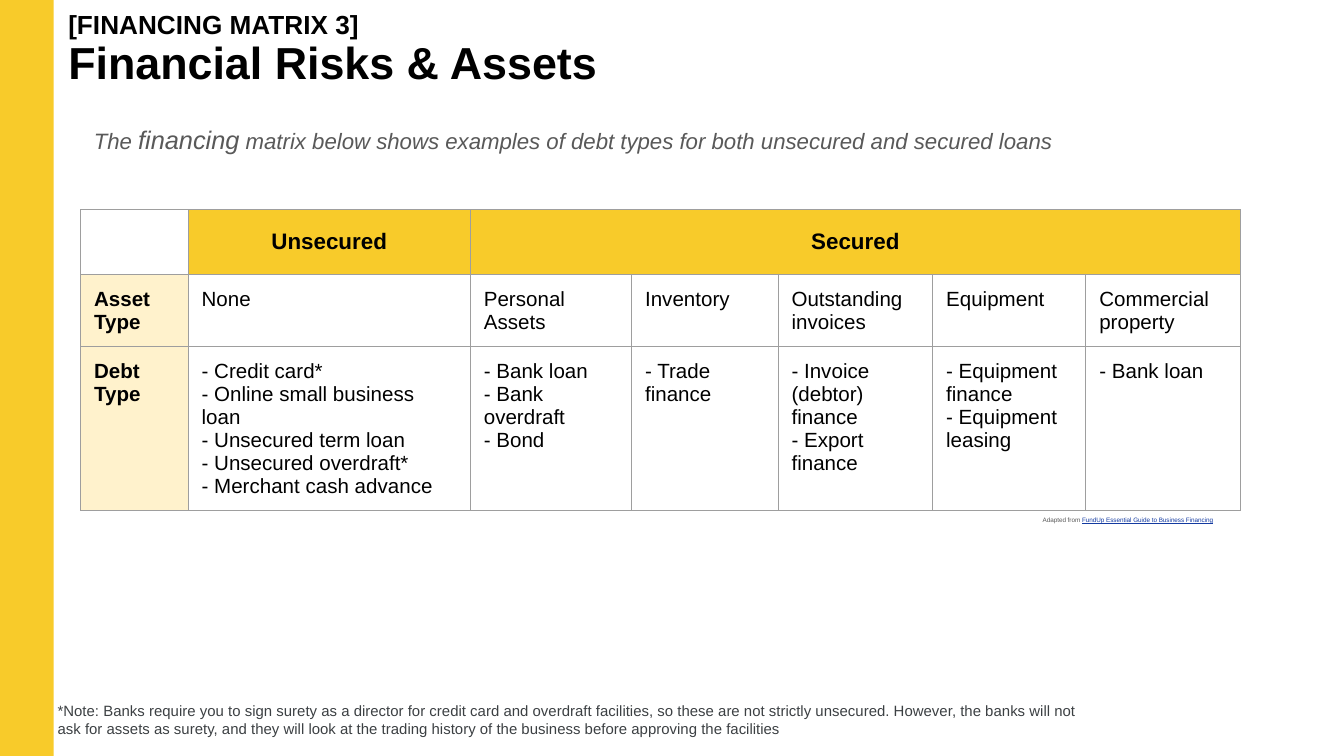
from lxml.etree import SubElement
from pptx import Presentation
from pptx.dml.color import RGBColor
from pptx.enum.shapes import MSO_SHAPE
from pptx.enum.text import MSO_ANCHOR, PP_ALIGN
from pptx.oxml.ns import qn
from pptx.util import Inches, Pt

YELLOW, CREAM, WHITE = "F8CB2A", "FFF2CC", "FFFFFF"
BLACK, GREY, NOTE_GREY, LINK_BLUE = "000000", "595959", "3C4043", "133AA1"
BORDER = "9E9E9E"
WIDTH = 10
HEIGHT = WIDTH * 9 / 16
MARGINS = ("margin_left", "margin_top", "margin_right", "margin_bottom")
COLUMN_WIDTHS = [0.8, 2.1, 1.2, 1.09, 1.15, 1.14, 1.15]
ROW_HEIGHTS = [0.48, 0.54, 1.22]
ROWS = [
    ["", "Unsecured", "Secured"],
    ["Asset Type", "None", "Personal Assets", "Inventory",
     "Outstanding invoices", "Equipment", "Commercial property"],
    ["Debt Type",
     "- Credit card*\n- Online small business loan\n- Unsecured term loan\n"
     "- Unsecured overdraft*\n- Merchant cash advance",
     "- Bank loan\n- Bank overdraft\n- Bond",
     "- Trade finance",
     "- Invoice (debtor) finance\n- Export finance",
     "- Equipment finance\n- Equipment leasing",
     "- Bank loan"],
]


def color(value):
    return RGBColor.from_string(value)


def set_values(target, values):
    for name, value in values.items():
        setattr(target, name, value)


def fill_solid(target, value):
    target.fill.solid()
    target.fill.fore_color.rgb = color(value)


def add_span(para, text, size, hue, **styles):
    span = para.add_run()
    span.text = text
    set_values(span.font, {"name": "Arial", "size": Pt(size), **styles})
    span.font.color.rgb = color(hue)


def add_text(page, box, paras, anchor=MSO_ANCHOR.TOP, **layout):
    frame = page.shapes.add_textbox(*map(Inches, box)).text_frame
    set_values(frame, {"word_wrap": True, "vertical_anchor": anchor,
                       **dict.fromkeys(MARGINS, Inches(0.1))})
    for index, spans in enumerate(paras):
        para = frame.paragraphs[0] if index == 0 else frame.add_paragraph()
        set_values(para, layout)
        for text, size, hue, styles in spans:
            add_span(para, text, size, hue, **styles)


def draw_borders(cell):
    properties = cell._tc.get_or_add_tcPr()
    for index, side in enumerate(("a:lnL", "a:lnR", "a:lnT", "a:lnB")):
        line = properties.makeelement(qn(side), {"w": str(Pt(0.75))})
        fill = SubElement(line, qn("a:solidFill"))
        SubElement(fill, qn("a:srgbClr"), val=BORDER)
        properties.insert(index, line)


def write_cell(cell, text, size, bold, align):
    for index, line in enumerate(text.split("\n")):
        frame = cell.text_frame
        para = frame.paragraphs[0] if index == 0 else frame.add_paragraph()
        set_values(para, {"alignment": align})
        para.font.size = Pt(size)
        if line:
            add_span(para, line, size, BLACK, bold=bold)


def cell_fill(row, column):
    if row == 0:
        return YELLOW if column else WHITE
    return WHITE if column else CREAM


def add_matrix(page, box):
    table = page.shapes.add_table(len(ROWS), len(COLUMN_WIDTHS),
                                  *map(Inches, box)).table
    set_values(table, {"first_row": False, "horz_banding": False})
    for column, width in zip(table.columns, COLUMN_WIDTHS):
        column.width = Inches(width)
    for row, height in zip(table.rows, ROW_HEIGHTS):
        row.height = Inches(height)
    table.cell(0, 2).merge(table.cell(0, 6))
    for row, texts in enumerate(ROWS):
        header = row == 0
        for column in range(len(COLUMN_WIDTHS)):
            cell = table.cell(row, column)
            set_values(cell, dict.fromkeys(MARGINS, Inches(0.1)))
            cell.vertical_anchor = MSO_ANCHOR.MIDDLE if header else MSO_ANCHOR.TOP
            fill_solid(cell, cell_fill(row, column))
            draw_borders(cell)
            if column < len(texts):
                write_cell(cell, texts[column], 12 if header else 11,
                           header or column == 0,
                           PP_ALIGN.CENTER if header else PP_ALIGN.LEFT)


def add_side_band(page, box):
    band = page.shapes.add_shape(MSO_SHAPE.RECTANGLE, *map(Inches, box))
    band.shadow.inherit = False
    fill_solid(band, YELLOW)
    band.line.fill.background()


def add_heading(page, box):
    add_text(page, box, [
        [("[FINANCING MATRIX 3]", 14, BLACK, {"bold": True})],
        [("Financial Risks & Assets", 24, BLACK, {"bold": True})],
    ], line_spacing=0.9)


def add_introduction(page, box):
    italic = {"italic": True}
    add_text(page, box, [[
        ("The ", 11.9, GREY, italic),
        ("financing", 13.6, GREY, italic),
        (" matrix below shows examples of debt types for both unsecured"
         " and secured loans", 11.9, GREY, italic),
    ]], anchor=MSO_ANCHOR.MIDDLE)


def add_credit(page, box):
    add_text(page, box, [[
        ("Adapted from ", 3.4, GREY, {}),
        ("FundUp Essential Guide to Business Financing", 3.4, LINK_BLUE,
         {"underline": True}),
    ]], anchor=MSO_ANCHOR.MIDDLE, line_spacing=0.8)


def add_footnote(page, box):
    add_text(page, box, [[(
        "*Note: Banks require you to sign surety as a director for credit card"
        " and overdraft facilities, so these are not strictly unsecured."
        " However, the banks will not ask for assets as surety, and they will"
        " look at the trading history of the business before approving the"
        " facilities", 8, NOTE_GREY, {})]])


def main():
    deck = Presentation()
    set_values(deck, {"slide_width": Inches(WIDTH), "slide_height": Inches(HEIGHT)})
    page = deck.slides.add_slide(deck.slide_layouts[6])
    add_side_band(page, (0, 0, 0.4, HEIGHT))
    add_matrix(page, (0.6, 1.56, sum(COLUMN_WIDTHS), sum(ROW_HEIGHTS)))
    add_introduction(page, (0.6, 0.78, 7.64, 0.52))
    add_credit(page, (7.66, 3.75, 1.56, 0.25))
    add_footnote(page, (0.33, 5.12, 7.92, 0.47))
    add_heading(page, (0.41, -0.01, 6.98, 0.79))
    deck.save("out.pptx")


if __name__ == "__main__":
    main()
